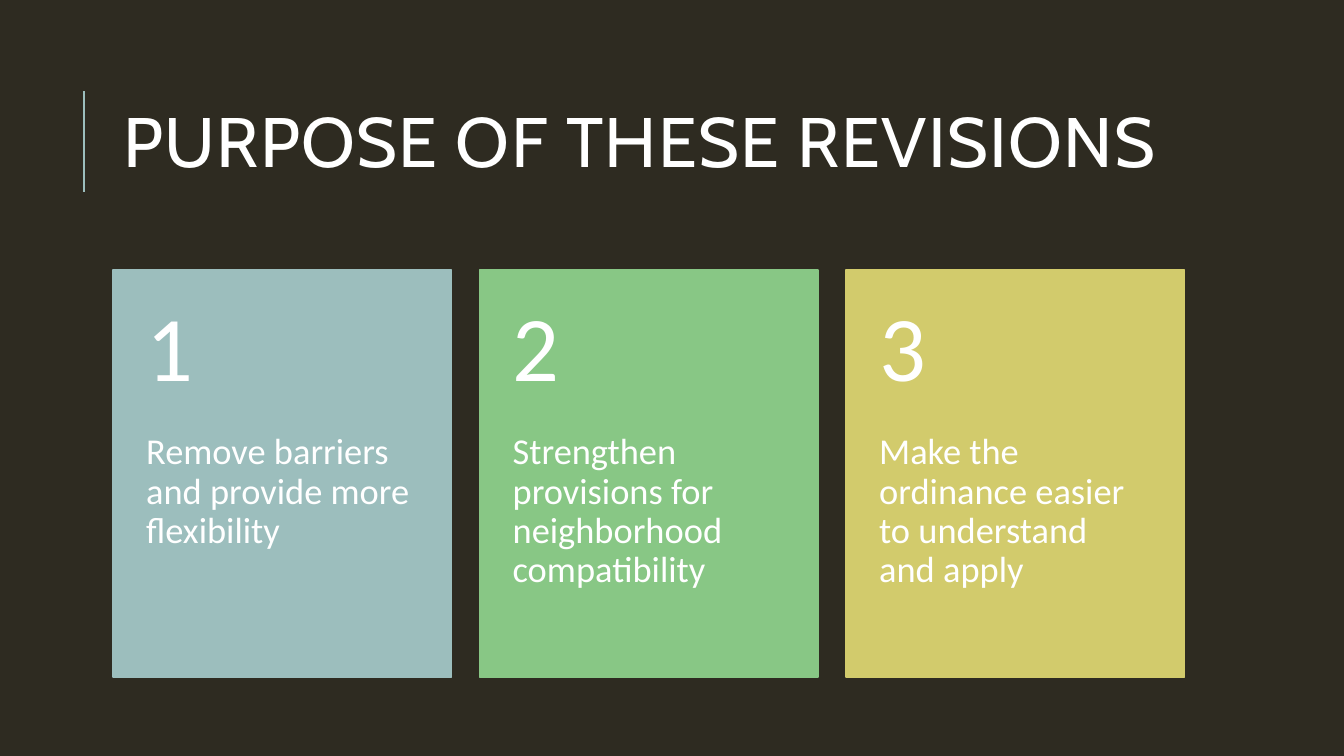
"""Build the slide on the purpose of the revisions: a title and three numbered cards."""
from lxml import etree
from pptx import Presentation
from pptx.dml.color import RGBColor
from pptx.enum.shapes import MSO_CONNECTOR, MSO_SHAPE
from pptx.enum.text import MSO_ANCHOR, MSO_AUTO_SIZE, PP_ALIGN
from pptx.oxml.ns import qn
from pptx.util import Inches, Pt

LINE = MSO_CONNECTOR.STRAIGHT
RECT = MSO_SHAPE.RECTANGLE
TOP, MIDDLE = MSO_ANCHOR.TOP, MSO_ANCHOR.MIDDLE
LEFT = PP_ALIGN.LEFT
FIXED = MSO_AUTO_SIZE.NONE
COLORS = {
    "ground": "2E2B21",
    "text": "FFFFFF",
    "blue": "9CBEBD",
    "green": "88C785",
    "gold": "D2CB6C",
}


def color(name):
    return RGBColor.from_string(COLORS[name])


def write(frame, text, font, size, anchor, lead):
    frame.word_wrap = True
    frame.auto_size = FIXED
    frame.vertical_anchor = anchor
    para = frame.paragraphs[0]
    para.text = text
    para.alignment = LEFT
    para.line_spacing = lead
    para.font.name = font
    para.font.size = Pt(size)
    para.font.color.rgb = color("text")


deck = Presentation()
deck.slide_width, deck.slide_height = Inches(13.33), Inches(7.5)
slide = deck.slides.add_slide(deck.slide_layouts[5])
slide.background.fill.solid()
slide.background.fill.fore_color.rgb = color("ground")
shapes = slide.shapes

rule = shapes.add_connector(LINE, Inches(0.83), Inches(1.9), Inches(0.83), Inches(0.9))
rule.line.color.rgb = color("blue")
rule.line.width = Pt(1.5)
etree.SubElement(rule._element.spPr, qn("a:effectLst"))

title = shapes.title
title.left, title.top = Inches(1.12), Inches(0.64)
title.width, title.height = Inches(10.63), Inches(1.64)
write(title.text_frame, "PURPOSE OF THESE REVISIONS", "Cabin", 50, MIDDLE, 0.8)
title.text_frame.paragraphs[0].runs[0].font._element.set("spc", "100")

cards = [
    ("blue", "Remove barriers and provide more flexibility"),
    ("green", "Strengthen provisions for neighborhood compatibility"),
    ("gold", "Make the ordinance easier to understand \nand apply"),
]
wide = Inches(3.36)
for i, (tint, text) in enumerate(cards):
    left = Inches(1.12 + 3.635 * i)
    card = shapes.add_shape(RECT, left, Inches(2.68), wide, Inches(4.04))
    card.shadow.inherit = False
    card.fill.solid()
    card.fill.fore_color.rgb = color(tint)
    card.line.color.rgb = color(tint)
    card.line.width = Pt(1.25)

    parts = [
        (text, 26, 4.3, 2.42, TOP, 0, 0.36),
        (str(i + 1), 66, 2.68, 1.61, MIDDLE, 0.18, 0.18),
    ]
    for words, size, top, high, anchor, above, below in parts:
        frame = shapes.add_textbox(left, Inches(top), wide, Inches(high)).text_frame
        frame.margin_left = frame.margin_right = Inches(0.33)
        frame.margin_top, frame.margin_bottom = Inches(above), Inches(below)
        write(frame, words, "Calibri", size, anchor, 0.9)

deck.save("out.pptx")
